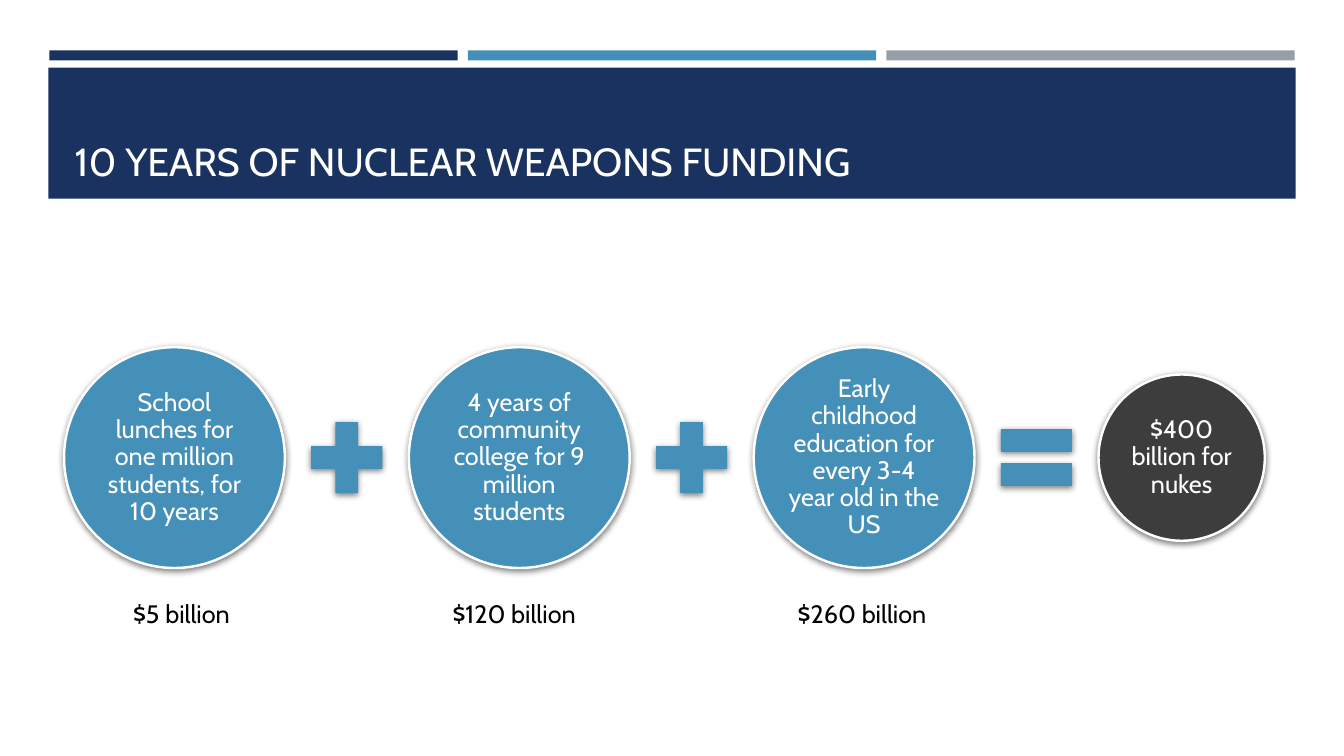
from lxml import etree
from pptx import Presentation
from pptx.dml.color import RGBColor
from pptx.enum import shapes, text
from pptx.oxml.ns import qn
from pptx.util import Inches, Pt

NAVY = RGBColor(0x1A, 0x32, 0x60)
BLUE = RGBColor(0x45, 0x90, 0xB8)
GRAY = RGBColor(0x96, 0x9F, 0xA7)
DARK = RGBColor(0x3D, 0x3D, 0x3D)
WHITE = RGBColor(255, 255, 255)
BLACK = RGBColor(0, 0, 0)
FONT = "Cabin"
KIND = shapes.MSO_SHAPE

# Content
TITLE = "10 YEARS OF NUCLEAR WEAPONS FUNDING"
# wording, sign that follows, cost, centre and width of the cost label
ITEMS = [
    ("School lunches for one million students, for 10 years",
     KIND.MATH_PLUS, "$5 billion", 1.8, 1.27),
    ("4 years of community college for 9 million students",
     KIND.MATH_PLUS, "$120 billion", 5.1, 1.56),
    ("Early childhood education for every 3-4 year old in the US",
     KIND.MATH_EQUAL, "$260 billion", 8.55, 1.56),
]
TOTAL = "$400 billion for nukes"
BARS = [NAVY, BLUE, GRAY]

# Layout, in inches
START, STEP, MID = 1.73, 3.42, 4.54
BIG, SMALL, SIGN = 2.19, 1.65, 0.96
SIGN_GAP, TOTAL_X = 1.71, 11.72

deck = Presentation()
deck.slide_width, deck.slide_height = Inches(13.33), Inches(7.5)
slide = deck.slides.add_slide(deck.slide_layouts[5])


def add_form(kind, left, top, width, height, color):
    form = slide.shapes.add_shape(kind, Inches(left), Inches(top),
                                  Inches(width), Inches(height))
    form.fill.solid()
    form.fill.fore_color.rgb = color
    form.line.fill.background()
    form.shadow.inherit = False
    return form


def add_round(kind, x, size, color):
    """Place a shadowed shape centred at x on the middle line."""
    form = add_form(kind, x - size / 2, MID - size / 2, size, size, color)
    effects = form._element.spPr.find(qn("a:effectLst"))
    shade = etree.SubElement(effects, qn("a:outerShdw"), blurRad=str(Pt(4.5)),
                             dist=str(Pt(1.5)), dir="5400000",
                             algn="ctr", rotWithShape="0")
    tint = etree.SubElement(shade, qn("a:srgbClr"), val="000000")
    etree.SubElement(tint, qn("a:alpha"), val="50000")
    return form


def set_text(form, words, size, color, align):
    frame = form.text_frame
    frame.text = words
    frame.word_wrap = True
    para = frame.paragraphs[0]
    para.alignment = align
    font = para.runs[0].font
    font.name, font.size, font.color.rgb = FONT, Pt(size), color
    return frame


def add_circle(words, x, size, color):
    disc = add_round(KIND.OVAL, x, size, color)
    disc.line.color.rgb = WHITE
    disc.line.width = Pt(1.75)
    frame = set_text(disc, words, 18, WHITE, text.PP_ALIGN.CENTER)
    frame.vertical_anchor = text.MSO_ANCHOR.MIDDLE
    frame.margin_left = frame.margin_right = Inches(0.02)
    frame.margin_top = frame.margin_bottom = Inches(0.02)
    frame.paragraphs[0].line_spacing = 0.9


# Header bars and band
for i, color in enumerate(BARS):
    add_form(KIND.RECTANGLE, 0.49 + 4.15 * i, 0.5, 4.05, 0.1, color)
add_form(KIND.RECTANGLE, 0.48, 0.67, 12.37, 1.3, NAVY)

# Title, brought in front of the band
title = slide.shapes.title
title.left, title.top = Inches(0.64), Inches(0.77)
title.width, title.height = Inches(12.06), Inches(1.11)
frame = set_text(title, TITLE, 28, WHITE, text.PP_ALIGN.LEFT)
frame.vertical_anchor = text.MSO_ANCHOR.BOTTOM
frame.auto_size = text.MSO_AUTO_SIZE.NONE
slide.shapes._spTree.append(title._element)

# Equation with a cost under each circle
for i, (words, sign, cost, mid, width) in enumerate(ITEMS):
    x = START + STEP * i
    add_circle(words, x, BIG, BLUE)
    add_round(sign, x + SIGN_GAP, SIGN, BLUE)
    label = slide.shapes.add_textbox(Inches(mid - width / 2), Inches(5.89),
                                     Inches(width), Inches(0.4))
    set_text(label, cost, 18, BLACK, text.PP_ALIGN.CENTER)
add_circle(TOTAL, TOTAL_X, SMALL, DARK)

deck.save("out.pptx")
